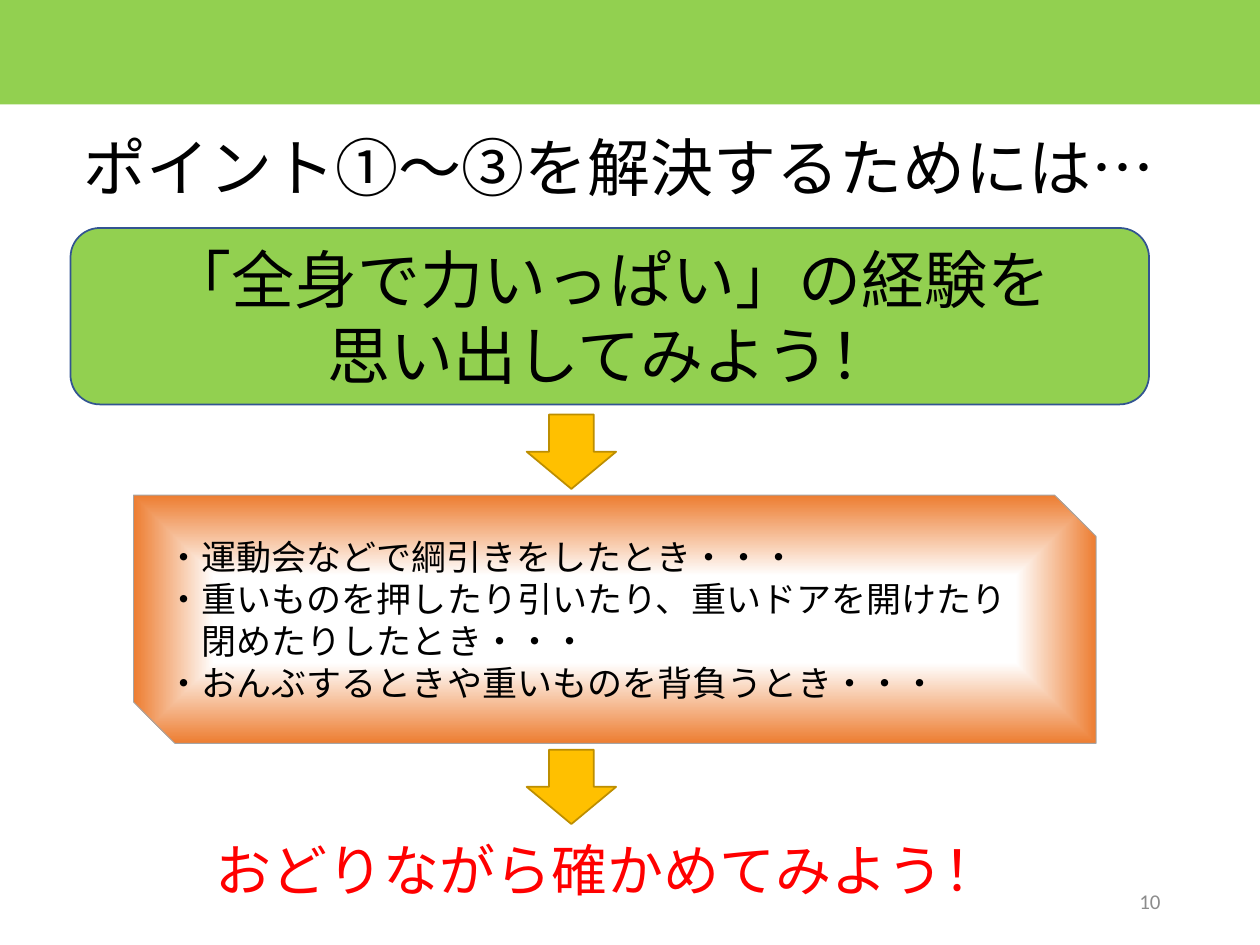
from pptx import Presentation
from pptx.dml.color import RGBColor
from pptx.enum.shapes import MSO_SHAPE
from pptx.enum.text import MSO_ANCHOR, MSO_AUTO_SIZE, PP_ALIGN
from pptx.oxml import parse_xml
from pptx.oxml.ns import nsdecls, qn
from pptx.util import Inches, Pt

RECT, ROUND = MSO_SHAPE.RECTANGLE, MSO_SHAPE.ROUNDED_RECTANGLE
ARROW, SNIP = MSO_SHAPE.DOWN_ARROW, MSO_SHAPE.SNIP_2_DIAG_RECTANGLE
TOP, MIDDLE = MSO_ANCHOR.TOP, MSO_ANCHOR.MIDDLE
LEFT, CENTER, RIGHT = PP_ALIGN.LEFT, PP_ALIGN.CENTER, PP_ALIGN.RIGHT
FIXED = MSO_AUTO_SIZE.NONE

FONT = "Calibri"
COLORS = {
    "green": "92D050", "navy": "325491", "gold": "FFC000", "brown": "BD8E00",
    "orange": "ED7D31", "white": "FFFFFF", "silver": "A5A5A5",
    "gray": "8C8C8C", "black": "000000", "red": "FF0000",
}
CASES = [
    "・運動会などで綱引きをしたとき・・・",
    "・重いものを押したり引いたり、重いドアを開けたり",
    "　閉めたりしたとき・・・",
    "・おんぶするときや重いものを背負うとき・・・",
]


def color(name):
    return RGBColor.from_string(COLORS[name])


def write(shape, lines, size, ink="black", align=LEFT, anchor=TOP, space=None):
    frame = shape.text_frame
    frame.word_wrap = True
    frame.auto_size = FIXED
    frame.vertical_anchor = anchor
    frame.text = "\n".join(lines)
    for para in frame.paragraphs:
        para.alignment = align
        para.line_spacing = space
        para.font.name = FONT
        para.font.size = Pt(size)
        para.font.color.rgb = color(ink)


def add_text(slide, box, line, size, **style):
    write(slide.shapes.add_textbox(*map(Inches, box)), [line], size, **style)


def add_title(slide, box, line):
    title = slide.shapes.title
    title.left, title.top, title.width, title.height = map(Inches, box)
    write(title, [line], 36, space=0.9)


def add_block(slide, kind, box, fill, edge=None, width=1):
    shape = slide.shapes.add_shape(kind, *map(Inches, box))
    shape.shadow.inherit = False
    shape.fill.solid()
    shape.fill.fore_color.rgb = color(fill)
    if edge:
        shape.line.color.rgb = color(edge)
        shape.line.width = Pt(width)
    else:
        shape.line.fill.background()
    return shape


def glow(shape, inner, outer):
    """Blend from the inner colour at the centre to the outer at the edges."""
    stops = "".join(
        f'<a:gs pos="{pos * 1000}"><a:srgbClr val="{COLORS[name]}"/></a:gs>'
        for pos, name in ((0, inner), (35, inner), (100, outer)))
    grad = parse_xml(
        f'<a:gradFill {nsdecls("a")} rotWithShape="1"><a:gsLst>{stops}</a:gsLst>'
        '<a:path path="shape">'
        '<a:fillToRect l="50000" t="50000" r="50000" b="50000"/>'
        '</a:path></a:gradFill>')
    props = shape._element.spPr
    props.replace(props.find(qn("a:solidFill")), grad)


def main():
    deck = Presentation()
    deck.slide_width, deck.slide_height = Inches(10), Inches(7.5)
    slide = deck.slides.add_slide(deck.slide_layouts[5])

    add_block(slide, RECT, (-0.02, 0, 10.02, 0.83), "green")
    add_title(slide, (0.56, 1.04, 9.24, 0.77), "ポイント①～③を解決するためには…")

    call = add_block(slide, ROUND, (0.56, 1.81, 8.56, 1.4), "green", "navy")
    write(call, ["「全身で力いっぱい」の経験を", "思い出してみよう！"], 36,
          align=CENTER, anchor=MIDDLE)

    for top in (3.29, 5.95):
        add_block(slide, ARROW, (4.18, top, 0.71, 0.59), "gold", "brown")

    cases = add_block(slide, SNIP, (1.06, 3.93, 7.64, 1.97),
                      "white", "silver", 0.5)
    glow(cases, "white", "orange")
    write(cases, CASES, 20, anchor=MIDDLE)

    add_text(slide, (1.61, 6.58, 6.58, 0.64), "おどりながら確かめてみよう！", 32,
             ink="red")
    add_text(slide, (7.06, 6.95, 2.25, 0.4), "10", 12,
             ink="gray", align=RIGHT, anchor=MIDDLE)
    deck.save("out.pptx")


if __name__ == "__main__":
    main()
